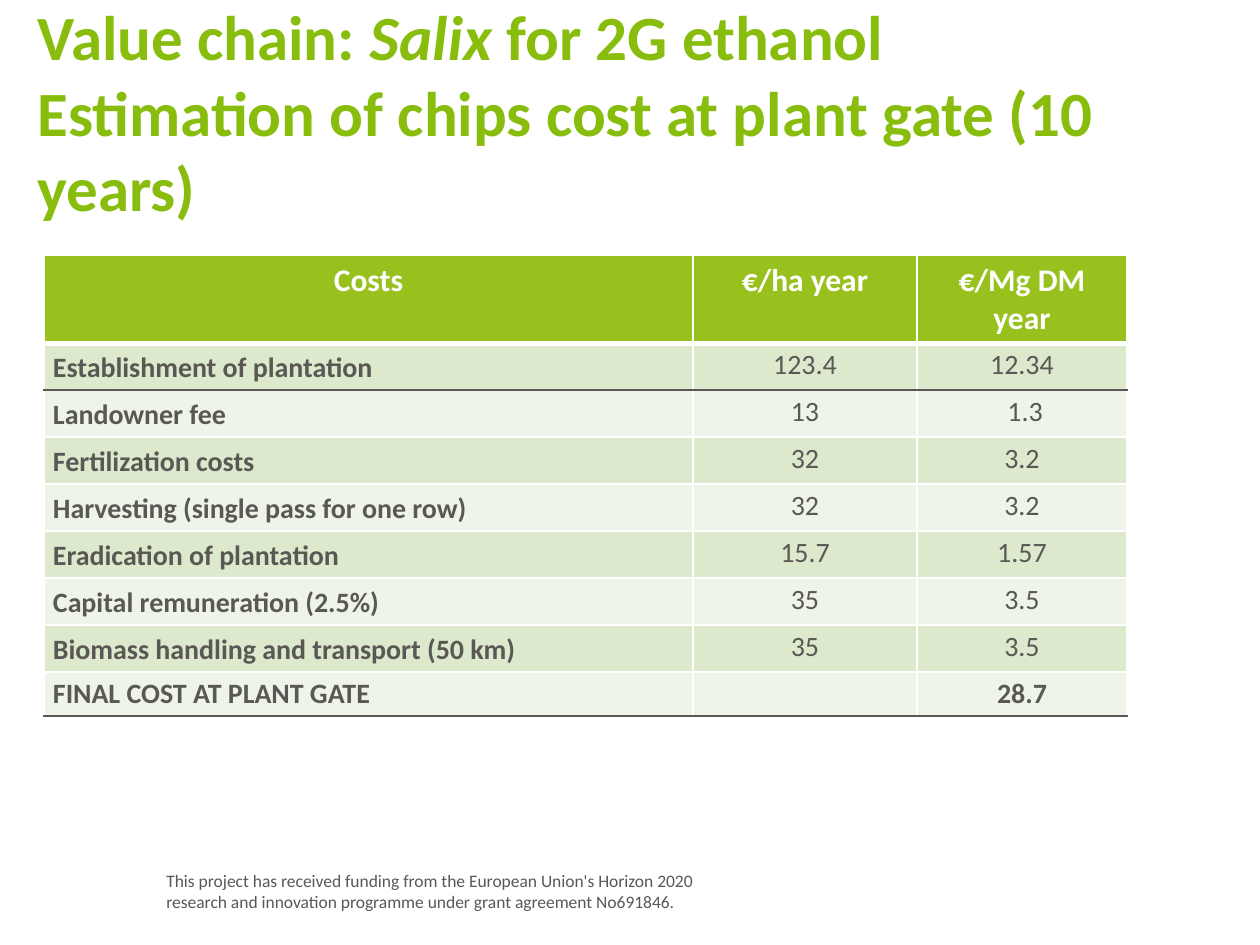
from pptx import Presentation
from pptx.dml.color import RGBColor
from pptx.enum.text import MSO_ANCHOR, PP_ALIGN
from pptx.oxml import parse_xml
from pptx.oxml.ns import nsdecls
from pptx.util import Pt

PX = 914400 / 126
GREY, WHITE = "595854", "FFFFFF"


def px(*values):
    return [round(v * PX) for v in values]


def add_run(p, text, size, color, bold=False, italic=False):
    r = p.add_run()
    r.text = text
    style = {"name": "Calibri", "size": Pt(size), "bold": bold, "italic": italic}
    for name, value in style.items():
        setattr(r.font, name, value)
    r.font.color.rgb = RGBColor.from_string(color)


prs = Presentation()
prs.slide_width, prs.slide_height = px(1260, 945)
s = prs.slides.add_slide(prs.slide_layouts[6])

funding = [
    "This project has received funding from the European Union's Horizon 2020",
    "research and innovation programme under grant agreement No691846.",
]
tf = s.shapes.add_textbox(*px(154, 864, 605, 55)).text_frame
tf.word_wrap = True
for i, line in enumerate(funding):
    p = tf.add_paragraph() if i else tf.paragraphs[0]
    add_run(p, line, 10, GREY)

rows = [
    ("Costs", "€/ha year", "€/Mg DM year"),
    ("Establishment of plantation", "123.4", "12.34"),
    ("Landowner fee", "13", " 1.3"),
    ("Fertilization costs", "32", "3.2"),
    ("Harvesting (single pass for one row)", "32", "3.2"),
    ("Eradication of plantation", "15.7", "1.57"),
    ("Capital remuneration (2.5%)", "35", "3.5"),
    ("Biomass handling and transport (50 km)", "35", "3.5"),
    ("FINAL COST AT PLANT GATE", "", "28.7"),
]
last = len(rows) - 1
widths = [649, 224, 210]
heights = [88] + [47] * (last - 1) + [44]
frame = s.shapes.add_table(
    len(rows), len(widths), *px(44, 255, sum(widths), sum(heights)))
table = frame.table
table.first_row = table.horz_banding = False
for column, width in zip(table.columns, px(*widths)):
    column.width = width
for row, height in zip(table.rows, px(*heights)):
    row.height = height

body_margins = dict(zip(
    ("margin_left", "margin_top", "margin_right", "margin_bottom"), px(9, 5, 9, 5)))
for i, values in enumerate(rows):
    header = i == 0
    fill = "98C11E" if header else "DDE9CD" if i % 2 else "EFF4E8"
    borders = {
        "lnL": (WHITE, 1),
        "lnR": (WHITE, 1),
        "lnT": (GREY if i == 2 else WHITE, 3 if i == 1 else 1),
        "lnB": (GREY if i in (1, last) else WHITE, 3 if header else 1),
    }
    for j, text in enumerate(values):
        cell = table.cell(i, j)
        cell.fill.solid()
        cell.fill.fore_color.rgb = RGBColor.from_string(fill)
        for k, (tag, (color, width)) in enumerate(borders.items()):
            cell._tc.tcPr.insert(k, parse_xml(
                f'<a:{tag} {nsdecls("a")} w="{Pt(width)}"><a:solidFill>'
                f'<a:srgbClr val="{color}"/></a:solidFill></a:{tag}>'))
        if not header:
            for name, value in body_margins.items():
                setattr(cell, name, value)
        label = j == 0 and not header
        cell.vertical_anchor = MSO_ANCHOR.BOTTOM if label else MSO_ANCHOR.TOP
        p = cell.text_frame.paragraphs[0]
        p.alignment = PP_ALIGN.LEFT if label else PP_ALIGN.CENTER
        if text:
            add_run(p, text, 18 if header else 16, WHITE if header else GREY,
                    bold=j == 0 or i in (0, last))
        else:
            p._p.get_or_add_endParaRPr().set("sz", "1600")

tf = s.shapes.add_textbox(*px(25, 57, 1193, 108)).text_frame
tf.word_wrap = True
tf.vertical_anchor = MSO_ANCHOR.MIDDLE
p = tf.paragraphs[0]
title = {"size": 36, "color": "88BD0D", "bold": True}
add_run(p, "Value chain: ", **title)
add_run(p, "Salix ", italic=True, **title)
add_run(p, "for 2G ethanol", **title)
p.add_line_break()
add_run(p, "Estimation of chips cost at plant gate (10 years)", **title)

prs.save("out.pptx")
